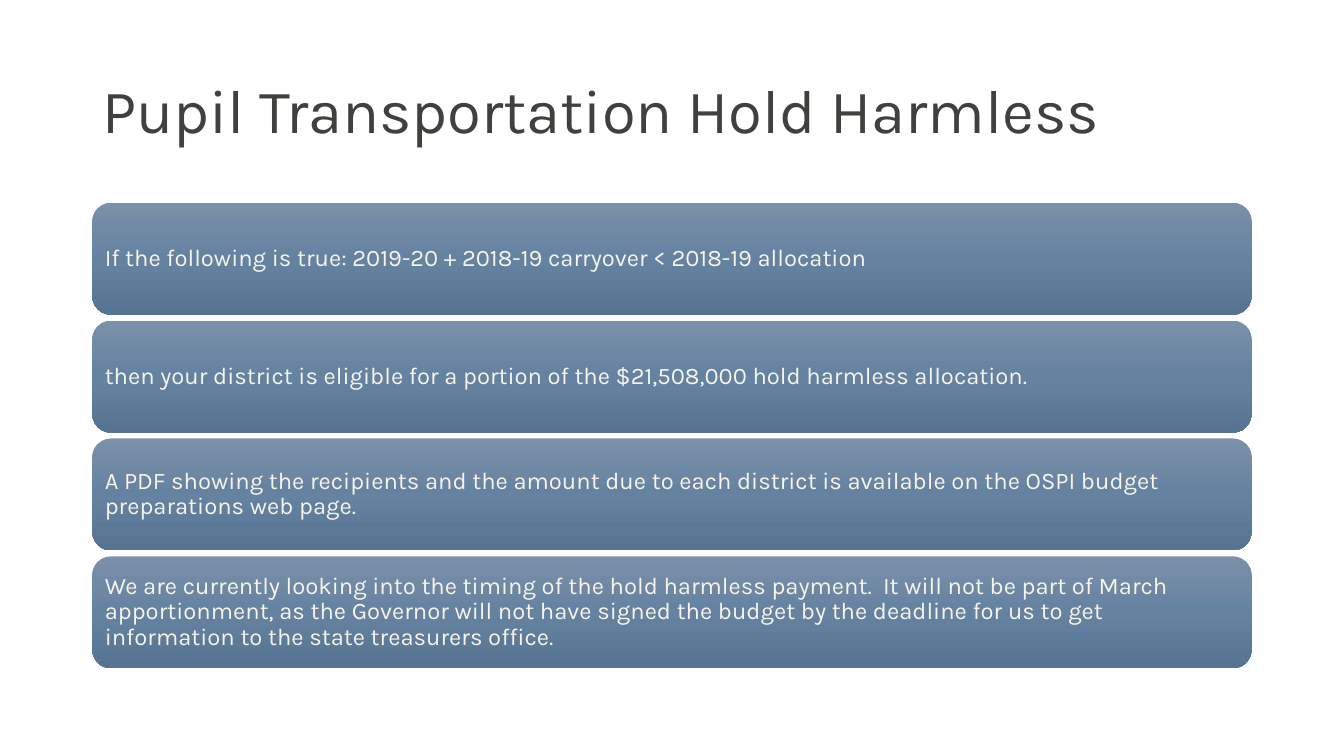
import copy
from dataclasses import dataclass

import pptx
import pptx.dml.color
import pptx.enum.shapes
import pptx.enum.text
import pptx.oxml.ns
import pptx.util

Pt = pptx.util.Pt
RGB = pptx.dml.color.RGBColor


@dataclass
class Theme:
    font: str = "Karla"
    title_size: int = 44
    body_size: int = 17
    title_color: str = "40403D"
    body_color: str = "F7F5EB"
    gradient: tuple = ((0, "7B90A9"), (0.5, "6582A1"), (1, "577392"))


theme = Theme()

LEFT, WIDTH = 66, 828
BAR_TOP, BAR_HEIGHT, BAR_PITCH = 144.8, 80, 84.2

TITLE = "Pupil Transportation Hold Harmless"
STATEMENTS = [
    "If the following is true: 2019-20 + 2018-19 carryover < 2018-19 allocation",
    "then your district is eligible for a portion of the $21,508,000 hold harmless allocation.",
    "A PDF showing the recipients and the amount due to each district is available "
    "on the OSPI budget preparations web page.",
    "We are currently looking into the timing of the hold harmless payment.  It will not "
    "be part of March apportionment, as the Governor will not have signed the budget by "
    "the deadline for us to get information to the state treasurers office.",
]


def write(sp, text, size, color):
    tf = sp.text_frame
    tf.text = text
    tf.word_wrap = True
    tf.vertical_anchor = pptx.enum.text.MSO_ANCHOR.MIDDLE
    p = tf.paragraphs[0]
    p.alignment = pptx.enum.text.PP_ALIGN.LEFT
    p.line_spacing = 0.9
    r = p.runs[0]
    r.font.name = theme.font
    r.font.size = Pt(size)
    r.font.color.rgb = RGB.from_string(color)


def fill_gradient(sp):
    """Fill from top to bottom with the three theme colours."""
    sp.fill.gradient()
    sp.fill.gradient_angle = 270
    stop_list = sp._element.spPr.find(".//" + pptx.oxml.ns.qn("a:gsLst"))
    stop_list.append(copy.deepcopy(stop_list[0]))
    for stop, (position, color) in zip(sp.fill.gradient_stops, theme.gradient):
        stop.position = position
        stop.color.rgb = RGB.from_string(color)


prs = pptx.Presentation()
prs.slide_width, prs.slide_height = Pt(960), Pt(540)
s = prs.slides.add_slide(prs.slide_layouts[6])

title = s.shapes.add_textbox(Pt(LEFT), Pt(28.8), Pt(WIDTH), Pt(104.4))
write(title, TITLE, theme.title_size, theme.title_color)

for i, statement in enumerate(STATEMENTS):
    bar = s.shapes.add_shape(
        pptx.enum.shapes.MSO_SHAPE.ROUNDED_RECTANGLE,
        Pt(LEFT), Pt(BAR_TOP + i * BAR_PITCH), Pt(WIDTH), Pt(BAR_HEIGHT),
    )
    bar.shadow.inherit = False
    bar.line.fill.background()
    fill_gradient(bar)
    write(bar, statement, theme.body_size, theme.body_color)
    tf = bar.text_frame
    tf.margin_left = tf.margin_right = tf.margin_top = tf.margin_bottom = Pt(5)

prs.save("out.pptx")
